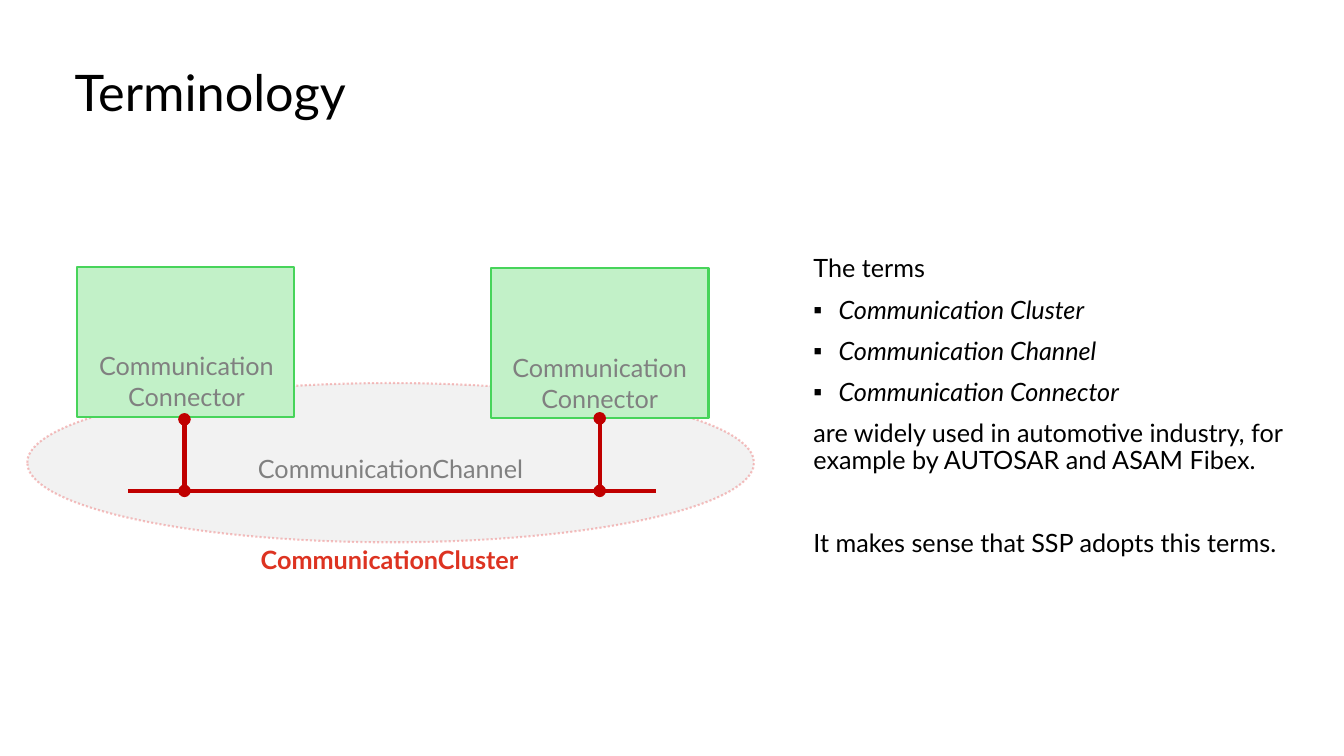
"""Build the terminology slide with its cluster diagram and list of terms."""
import dataclasses
import typing

import lxml.etree
import pptx
import pptx.dml.color
import pptx.enum.dml
import pptx.enum.shapes
import pptx.enum.text
import pptx.oxml.ns
import pptx.util

COLS, ROWS = 160, 90
WIDE, HIGH = pptx.util.Inches(13.333), pptx.util.Inches(7.5)
FONT = "Lato"
HUES = {
    "ink": "000000",
    "grey": "808080",
    "cloud": "F2F2F2",
    "rim": "E20000",
    "box": "C2F1C8",
    "edge": "47D45A",
    "wire": "C00000",
    "name": "DD3321",
}
KIND = pptx.enum.shapes.MSO_SHAPE
ALIGN = pptx.enum.text.PP_ALIGN
SIZE = pptx.enum.text.MSO_AUTO_SIZE


@dataclasses.dataclass(frozen=True)
class Area:
    col: float
    row: float
    cols: float
    rows: float


@dataclasses.dataclass(frozen=True)
class Node:
    kind: typing.Any
    area: Area
    fill: str
    line: str


@dataclasses.dataclass(frozen=True)
class Label:
    text: str
    area: Area
    hue: str = "grey"
    bold: bool = False


@dataclasses.dataclass(frozen=True)
class Wire:
    start: tuple[float, float]
    end: tuple[float, float]
    dots: bool = False


@dataclasses.dataclass(frozen=True)
class Item:
    text: str
    term: bool = False
    gap: float = 10


CLOUD = Node(KIND.OVAL, Area(3.24, 45.6, 86.52, 18.96), "cloud", "rim")
BOXES = [
    Node(KIND.RECTANGLE, Area(col, row, 25.92, 17.88), "box", "edge")
    for col, row in ((9.12, 31.8), (58.44, 31.92))
]
LABELS = [
    Label("Communication\vConnector", Area(col, row, 26.88, 8.52))
    for col, row in ((57.96, 41.4), (8.76, 41.16))
] + [
    Label("CommunicationChannel", Area(22.08, 53.4, 48.84, 4.8)),
    Label("CommunicationCluster", Area(21.96, 64.2, 48.84, 4.8), "name", True),
]
BUS = 58.44
WIRES = [
    Wire((15.24, BUS), (78.12, BUS)),
    Wire((71.4, 49.8), (71.4, BUS), True),
    Wire((21.96, 49.92), (21.96, BUS), True),
]
ITEMS = [
    Item("The terms"),
    Item("Communication Cluster", True),
    Item("Communication Channel", True),
    Item("Communication Connector", True),
    Item("are widely used in automotive industry, for example by AUTOSAR and ASAM Fibex."),
    Item("It makes sense that SSP adopts this terms.", gap=39.5),
]


def across(col: float) -> int:
    return round(WIDE * col / COLS)


def down(row: float) -> int:
    return round(HIGH * row / ROWS)


def frame(area: Area) -> tuple[int, int, int, int]:
    return across(area.col), down(area.row), across(area.cols), down(area.rows)


def paint(hue: str) -> pptx.dml.color.RGBColor:
    return pptx.dml.color.RGBColor.from_string(HUES[hue])


def add(host: typing.Any, tag: str, **attrs: str) -> None:
    lxml.etree.SubElement(host, pptx.oxml.ns.qn(tag), attrs)


def style(para: typing.Any, size: float, hue: str = "ink",
          bold: bool = False, slant: bool = False) -> None:
    for run in para.runs:
        font = run.font
        font.name, font.size = FONT, pptx.util.Pt(size)
        font.bold, font.italic = bold, slant
        font.color.rgb = paint(hue)


def move(shape: typing.Any, area: Area) -> None:
    shape.left, shape.top, shape.width, shape.height = frame(area)


def draw_node(slide: typing.Any, node: Node) -> typing.Any:
    shape = slide.shapes.add_shape(node.kind, *frame(node.area))
    shape.shadow.inherit = False
    shape.fill.solid()
    shape.fill.fore_color.rgb = paint(node.fill)
    shape.line.color.rgb = paint(node.line)
    shape.line.width = pptx.util.Pt(1.5)
    return shape


def draw_cloud(slide: typing.Any) -> None:
    shape = draw_node(slide, CLOUD)
    shape.line.dash_style = pptx.enum.dml.MSO_LINE.ROUND_DOT
    add(shape.element.xpath(".//a:ln//a:srgbClr")[0], "a:alpha", val="24000")


def draw_label(slide: typing.Any, label: Label) -> None:
    text = slide.shapes.add_textbox(*frame(label.area)).text_frame
    text.word_wrap = True
    text.auto_size = SIZE.SHAPE_TO_FIT_TEXT
    para = text.paragraphs[0]
    para.text = label.text
    para.alignment = ALIGN.CENTER
    para.space_before = pptx.util.Pt(6)
    style(para, 18, label.hue, label.bold)


def draw_wire(slide: typing.Any, wire: Wire) -> None:
    ends = [cast(pos) for point in (wire.start, wire.end)
            for cast, pos in zip((across, down), point)]
    link = slide.shapes.add_connector(
        pptx.enum.shapes.MSO_CONNECTOR.STRAIGHT, *ends)
    link.line.color.rgb = paint("wire")
    link.line.width = pptx.util.Pt(3)
    if wire.dots:
        for tag in ("a:headEnd", "a:tailEnd"):
            add(link.element.xpath(".//a:ln")[0], tag, type="oval")
    add(link.element.spPr, "a:effectLst")


def fill_title(shape: typing.Any) -> None:
    move(shape, Area(7.68, 5.76, 106.08, 11.04))
    text = shape.text_frame
    text.text = "Terminology"
    text.auto_size = SIZE.NONE
    text.vertical_anchor = pptx.enum.text.MSO_ANCHOR.MIDDLE
    para = text.paragraphs[0]
    para.alignment = ALIGN.LEFT
    para.line_spacing = 0.9
    style(para, 36)


def fill_body(shape: typing.Any) -> None:
    move(shape, Area(95.64, 29.88, 62.28, 40.08))
    text = shape.text_frame
    text.text = "\n".join(item.text for item in ITEMS)
    text.auto_size = SIZE.NONE
    for para, item in zip(text.paragraphs, ITEMS):
        para.line_spacing = 0.9
        para.space_before = pptx.util.Pt(item.gap)
        dent = pptx.util.Inches(0.25) if item.term else 0
        props = para.runs[0].font and para._p.get_or_add_pPr()
        props.set("marL", str(dent))
        props.set("indent", str(-dent))
        if item.term:
            add(props, "a:buChar", char="▪")
        else:
            add(props, "a:buNone")
        style(para, 18, slant=item.term)


def main() -> None:
    deck = pptx.Presentation()
    deck.slide_width, deck.slide_height = WIDE, HIGH
    slide = deck.slides.add_slide(deck.slide_layouts[1])
    fill_title(slide.shapes.title)
    draw_cloud(slide)
    for node in BOXES:
        draw_node(slide, node)
    for label in LABELS:
        draw_label(slide, label)
    for wire in WIRES:
        draw_wire(slide, wire)
    fill_body(slide.placeholders[1])
    deck.save("out.pptx")


if __name__ == "__main__":
    main()
